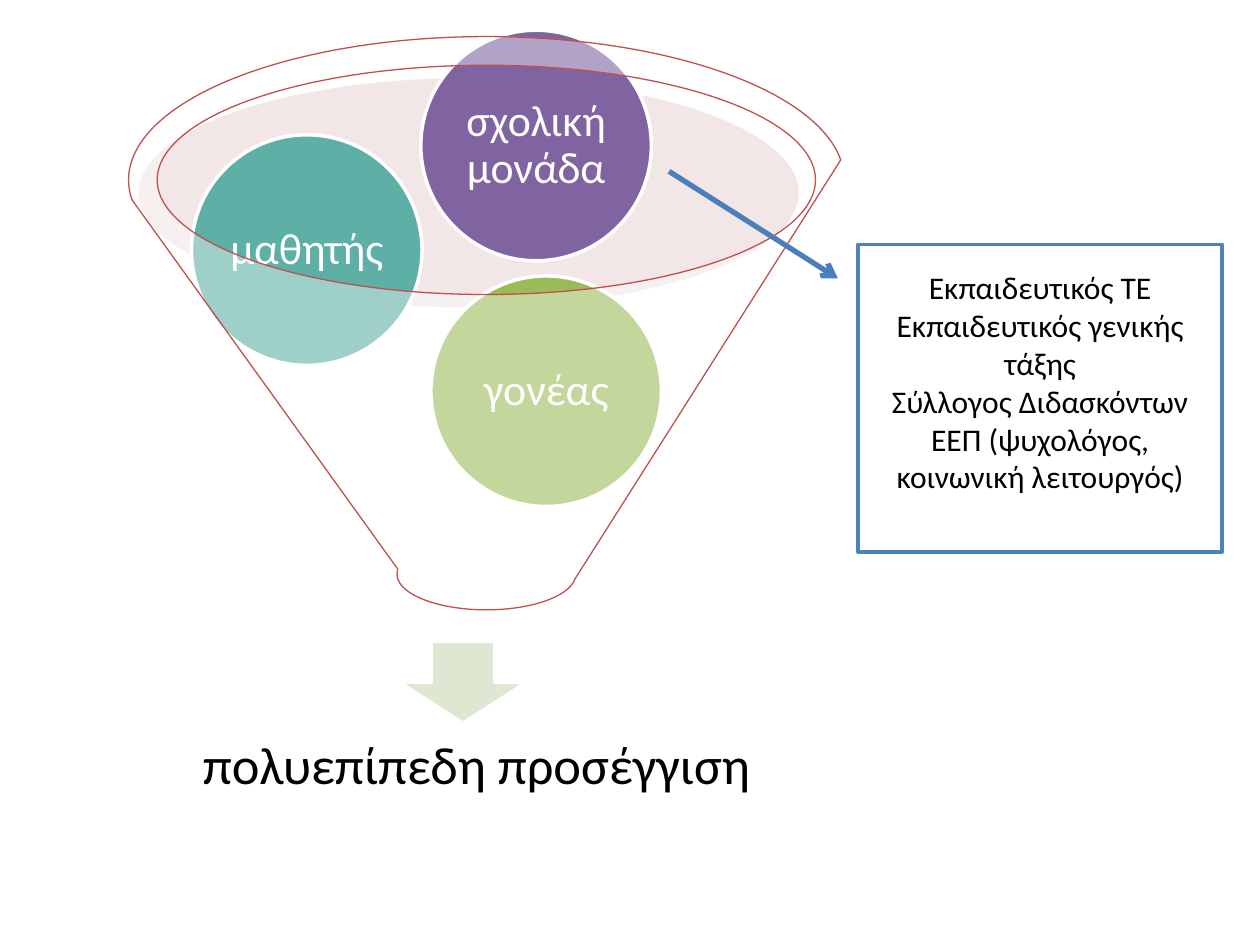
from lxml.etree import SubElement
from pptx import Presentation
from pptx.dml.color import RGBColor
from pptx.enum.shapes import MSO_CONNECTOR, MSO_SHAPE
from pptx.enum.text import MSO_ANCHOR as Anchor, PP_ALIGN as Align
from pptx.oxml.ns import qn
from pptx.util import Inches, Pt

COLORS = {
    "white": "FFFFFF", "black": "000000", "rim": "E2C2C2", "funnel": "C0504D",
    "down_arrow": "DEE7D1", "parent": "9BBB59", "pupil": "5EAFA6",
    "school": "8064A2", "box": "4F81BD", "pointer": "4B7EBC",
}
FONT = "Calibri"
CELL = 0.1  # inches: the slide is a grid of 100 columns by 75 rows
COLUMNS, ROWS = 100, 75


def cells(count):
    return Inches(count * CELL)


def rgb(name):
    return RGBColor.from_string(COLORS[name])


def write_text(shape, *lines, size, color="black", spacing=1.0,
               anchor=Anchor.MIDDLE, side=1, top=0.5):
    """Write centred paragraphs; side and top are the margins in cells."""
    frame = shape.text_frame
    frame.word_wrap = True
    frame.vertical_anchor = anchor
    frame.margin_left = frame.margin_right = cells(side)
    frame.margin_top = frame.margin_bottom = cells(top)
    for index, line in enumerate(lines):
        paragraph = frame.add_paragraph() if index else frame.paragraphs[0]
        paragraph.alignment = Align.CENTER
        paragraph.line_spacing = spacing
        run = paragraph.add_run()
        run.text = line
        run.font.name, run.font.size = FONT, Pt(size)
        run.font.color.rgb = rgb(color)


class FunnelSlide:
    CIRCLE = 18.3  # diameter in cells

    def __init__(self, presentation):
        self.slide = presentation.slides.add_slide(presentation.slide_layouts[6])
        self.shapes = self.slide.shapes

    def shape(self, kind, left, top, width, height, fill,
              line=None, weight=2, opacity=100):
        shape = self.shapes.add_shape(kind, *map(cells, (left, top, width, height)))
        shape.shadow.inherit = False
        shape.fill.solid()
        shape.fill.fore_color.rgb = rgb(fill)
        if opacity < 100:
            color = shape.fill._xPr.find(".//" + qn("a:srgbClr"))
            SubElement(color, qn("a:alpha"), val=str(opacity * 1000))
        if line:
            shape.line.color.rgb = rgb(line)
            shape.line.width = Pt(weight)
        else:
            shape.line.fill.background()
        return shape

    def circle(self, text, left, top, fill):
        circle = self.shape(MSO_SHAPE.OVAL, left, top, self.CIRCLE, self.CIRCLE,
                            fill, line="white")
        write_text(circle, text, size=25, color="white", spacing=0.9,
                   side=0.3, top=0.3)

    def caption(self, text, left, top, width, height):
        box = self.shapes.add_textbox(*map(cells, (left, top, width, height)))
        write_text(box, text, size=30, spacing=0.9, side=2.3, top=2.3)

    def box(self, lines, left, top, width, height):
        box = self.shape(MSO_SHAPE.RECTANGLE, left, top, width, height,
                         "white", line="box")
        write_text(box, *lines, size=18, anchor=Anchor.TOP, top=1.9)

    def pointer(self, start, end):
        arrow = self.shapes.add_connector(MSO_CONNECTOR.STRAIGHT,
                                          *map(cells, start + end))
        arrow.line.color.rgb = rgb("pointer")
        arrow.line.width = Pt(3)
        SubElement(arrow.line._get_or_add_ln(), qn("a:tailEnd"), type="arrow")
        SubElement(arrow._element.spPr, qn("a:effectLst"))


def main():
    presentation = Presentation()
    presentation.slide_width = cells(COLUMNS)
    presentation.slide_height = cells(ROWS)
    page = FunnelSlide(presentation)

    # Mouth of the funnel, outlet arrow and result
    page.shape(MSO_SHAPE.OVAL, 11, 6.2, 52.4, 18.2, "rim", opacity=40)
    page.shape(MSO_SHAPE.DOWN_ARROW, 31.7, 50.9, 10.1, 6.5, "down_arrow", line="white")
    page.caption("πολυεπίπεδη προσέγγιση", 13.5, 54.8, 48.7, 12.2)

    # People in the funnel, then the funnel over them
    for text, left, top, fill in (
        ("γονέας", 34.2, 21.9, "parent"),
        ("μαθητής", 15.2, 10.7, "pupil"),
        ("σχολική μονάδα", 33.4, 2.4, "school"),
    ):
        page.circle(text, left, top, fill)
    page.shape(MSO_SHAPE.FUNNEL, 10.2, 2.9, 56.8, 45.5, "white",
               line="funnel", weight=0.75, opacity=40)

    # Members of the school unit
    page.box(("Εκπαιδευτικός ΤΕ", "Εκπαιδευτικός γενικής τάξης",
              "Σύλλογος Διδασκόντων", "ΕΕΠ (ψυχολόγος, κοινωνική λειτουργός)"),
             68.1, 19.4, 28.9, 24.4)
    page.pointer((53.1, 13.6), (66.5, 22.1))

    presentation.save("out.pptx")


if __name__ == "__main__":
    main()
